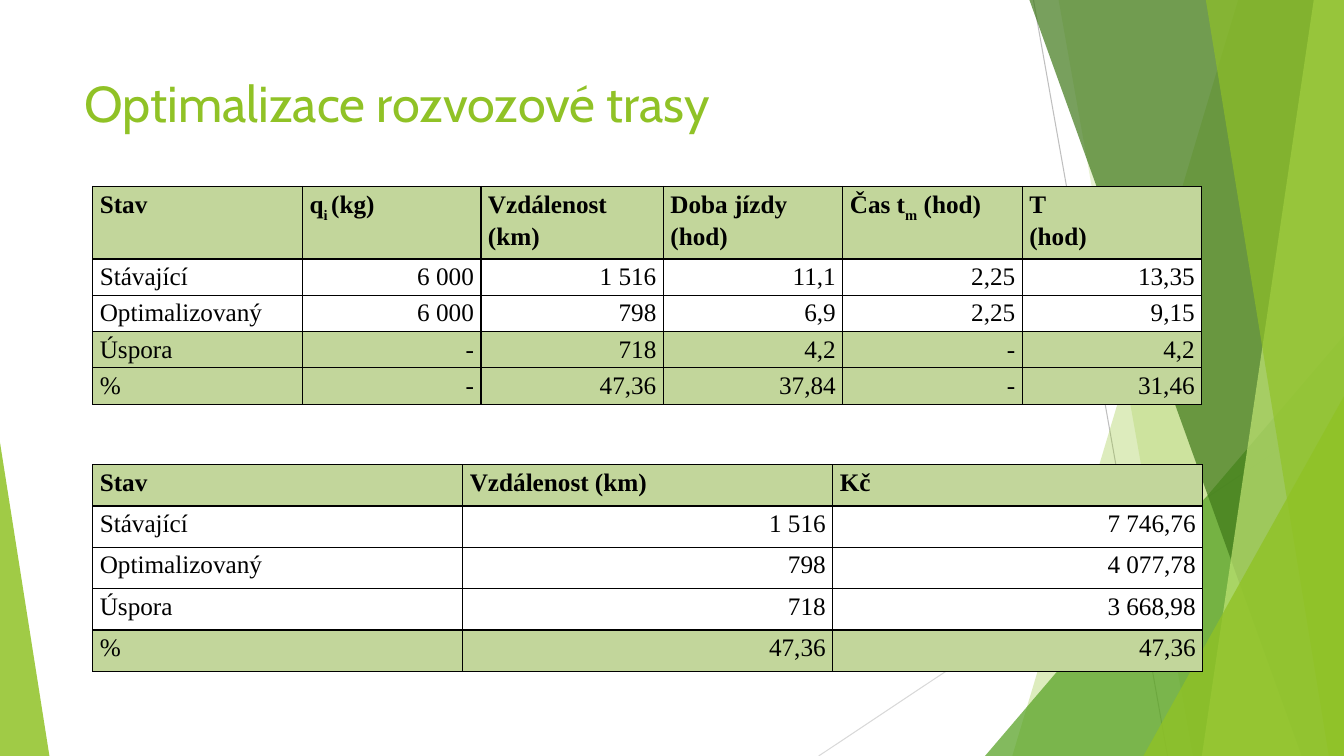
import pptx
import pptx.util
import pptx.dml.color
import pptx.enum.shapes
import pptx.enum.text
import pptx.oxml
import pptx.oxml.ns
from pptx.util import Inches

COLORS = {
    "lime": "90C226", "green": "54A021", "forest": "3F7819", "pale": "C0E474",
    "grey": "BFBFBF", "silver": "D9D9D9", "band": "C2D69B",
    "white": "FFFFFF", "black": "000000",
}
WIDTH, HEIGHT = 13.33, 7.5

ROUTE = [
    ["Stav", "q|i |(kg)", "Vzdálenost (km)", "Doba jízdy (hod)", "Čas t|m| (hod)", "T\n(hod)"],
    ["Stávající", "6 000", "1 516", "11,1", "2,25", "13,35"],
    ["Optimalizovaný", "6 000", "798", "6,9", "2,25", "9,15"],
    ["Úspora", "-", "718", "4,2", "-", "4,2"],
    ["%", "-", "47,36", "37,84", "-", "31,46"],
]
COST = [
    ["Stav", "Vzdálenost (km)", "Kč"],
    ["Stávající", "1 516", "7 746,76"],
    ["Optimalizovaný", "798", "4 077,78"],
    ["Úspora", "718", "3 668,98"],
    ["%", "47,36", "47,36"],
]


def rgb(name):
    return pptx.dml.color.RGBColor.from_string(COLORS[name])


def element(tag, content="", attrs=""):
    ns = pptx.oxml.ns.nsdecls("a")
    return pptx.oxml.parse_xml(f"<a:{tag} {ns} {attrs}>{content}</a:{tag}>")


def add_line(s, x1, y1, x2, y2, color):
    line = s.shapes.add_connector(
        pptx.enum.shapes.MSO_CONNECTOR.STRAIGHT,
        Inches(x1), Inches(y1), Inches(x2), Inches(y2))
    line.line.color.rgb = rgb(color)
    line.line.width = pptx.util.Pt(0.75)
    line._element.spPr.append(element("effectLst"))


def paint(sp, color, opacity):
    sp.shadow.inherit = False
    sp.line.fill.background()
    sp.fill.solid()
    sp.fill.fore_color.rgb = rgb(color)
    clr = sp._element.spPr.find(".//" + pptx.oxml.ns.qn("a:srgbClr"))
    clr.append(element("alpha", attrs=f'val="{opacity * 1000}"'))


def add_panel(s, top_x, bottom_x, color, opacity):
    fb = s.shapes.build_freeform(Inches(top_x), 0, scale=1.0)
    corners = [(WIDTH, 0), (WIDTH, HEIGHT), (bottom_x, HEIGHT)]
    fb.add_line_segments([(Inches(x), Inches(y)) for x, y in corners], close=True)
    paint(fb.convert_to_shape(), color, opacity)


def add_triangle(s, x, y, w, apex, color, opacity):
    sp = s.shapes.add_shape(
        pptx.enum.shapes.MSO_SHAPE.ISOSCELES_TRIANGLE,
        Inches(x), Inches(y), Inches(w), Inches(HEIGHT - y))
    sp.adjustments[0] = apex
    paint(sp, color, opacity)


def add_run(p, text, size, font, color, bold=False):
    r = p.add_run()
    r.text = text
    r.font.size = pptx.util.Pt(size)
    r.font.name = font
    r.font.bold = bold
    r.font.color.rgb = rgb(color)
    return r


def add_title(s, text):
    tf = s.shapes.add_textbox(Inches(0.74), Inches(0.67), Inches(9.4), Inches(1.44)).text_frame
    tf.word_wrap = True
    add_run(tf.paragraphs[0], text, 36, "Cabin", "lime")


def fill_cell(cell, text, fill, bold, right):
    cell.margin_left = cell.margin_right = Inches(0.07)
    cell.margin_top = cell.margin_bottom = 0
    tcPr = cell._tc.get_or_add_tcPr()
    for side in ("lnL", "lnR", "lnT", "lnB"):
        stroke = f'<a:solidFill><a:srgbClr val="{COLORS["black"]}"/></a:solidFill>'
        tcPr.append(element(side, stroke, 'w="12700"'))
    cell.fill.solid()
    cell.fill.fore_color.rgb = rgb(fill)
    tf = cell.text_frame
    for i, line in enumerate(text.split("\n")):
        p = tf.add_paragraph() if i else tf.paragraphs[0]
        p.line_spacing = 1.15
        if right:
            p.alignment = pptx.enum.text.PP_ALIGN.RIGHT
        for j, part in enumerate(line.split("|")):
            r = add_run(p, part, 18, "Times New Roman", "black", bold)
            if j % 2:
                r.font._element.set("baseline", "-25000")


def add_grid(s, y, data, widths, heights, banded_rows):
    frame = s.shapes.add_table(
        len(data), len(widths), Inches(0.92), Inches(y),
        Inches(sum(widths)), Inches(sum(heights)))
    table = frame.table
    table.first_row = table.horz_banding = False
    for col, width in zip(table.columns, widths):
        col.width = Inches(width)
    for i, values in enumerate(data):
        table.rows[i].height = Inches(heights[i])
        fill = "band" if i in banded_rows else "white"
        for j, text in enumerate(values):
            fill_cell(table.cell(i, j), text, fill, i == 0, i > 0 and j > 0)


def main():
    prs = pptx.Presentation()
    prs.slide_width, prs.slide_height = Inches(WIDTH), Inches(HEIGHT)
    s = prs.slides.add_slide(prs.slide_layouts[6])

    add_line(s, 10.25, 0, 11.58, HEIGHT, "grey")
    add_line(s, WIDTH, 4.03, 8.12, HEIGHT, "silver")
    add_panel(s, 12.28, 10.04, "lime", 30)
    add_panel(s, 10.5, 11.83, "lime", 20)
    add_triangle(s, 9.77, 3.33, 3.56, 1, "green", 72)
    add_panel(s, 10.21, 12.91, "forest", 70)
    add_panel(s, 13.03, 11.92, "pale", 70)
    add_panel(s, 11.96, 13.18, "lime", 65)
    add_triangle(s, 11.34, 3.93, 1.99, 1, "lime", 80)
    add_triangle(s, 0, 4.39, 0.49, 0, "lime", 85)

    add_title(s, "Optimalizace rozvozové trasy")
    add_grid(s, 1.85, ROUTE, [2.08, 1.77, 1.81] + [1.78] * 3, [0.72] + [0.36] * 4, {0, 3, 4})
    add_grid(s, 4.61, COST, [3.67] * 3, [0.41] * 5, {0, 4})
    prs.save("out.pptx")


if __name__ == "__main__":
    main()
